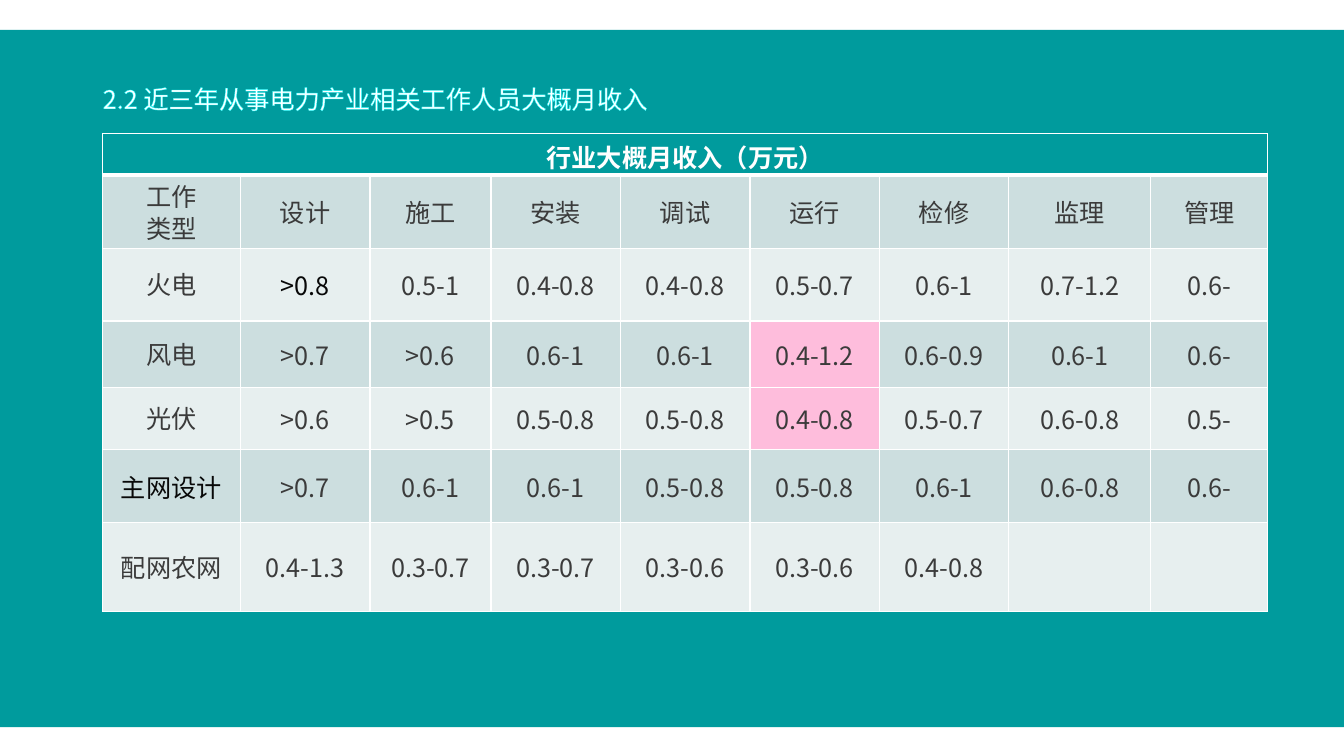
from lxml import etree
from pptx import Presentation
from pptx.dml.color import RGBColor
from pptx.enum import shapes, text
from pptx.oxml import ns
from pptx.util import Pt

FONT = "Noto Sans CJK SC"
TEAL, WHITE, PINK = "009B9D", "FFFFFF", "FEBDDC"
BANDS = ["E7EFEF", "CCDEDF"]
GREY, BLACK = "3B3B3B", "080808"


def paint(fill, color):
    fill.solid()
    fill.fore_color.rgb = RGBColor.from_string(color)


def write(para, words, color, bold=False):
    run = para.add_run()
    run.text = words
    run.font.size = Pt(18)
    run.font.bold = bold
    run.font.name = FONT
    paint(run.font.fill, color)
    props = run.font._element
    etree.SubElement(props, ns.qn("a:ea"), typeface=FONT)
    return props


deck = Presentation()
deck.slide_width, deck.slide_height = Pt(960), Pt(540)
slide = deck.slides.add_slide(deck.slide_layouts[5])

panel = slide.shapes.add_shape(
    shapes.MSO_SHAPE.RECTANGLE, Pt(0), Pt(21.3), Pt(960), Pt(498.2))
panel.shadow.inherit = False
paint(panel.fill, TEAL)
panel.line.fill.background()

title = slide.shapes.title
title.element.addprevious(panel.element)
title.left, title.top, title.width, title.height = Pt(30.2), Pt(51.8), Pt(575.3), Pt(30.2)
frame = title.text_frame
frame.word_wrap = True
frame.auto_size = text.MSO_AUTO_SIZE.SHAPE_TO_FIT_TEXT
frame.vertical_anchor = text.MSO_ANCHOR.TOP
para = frame.paragraphs[0]
para.alignment = text.PP_ALIGN.JUSTIFY
para.line_spacing = 1.2
para._p.get_or_add_pPr().set("indent", str(Pt(36)))
props = write(para, "2.2 近三年从事电力产业相关工作人员大概月收入", WHITE)
edge = etree.Element(ns.qn("a:ln"), w=str(Pt(0.75)))
solid = etree.SubElement(edge, ns.qn("a:solidFill"))
etree.SubElement(solid, ns.qn("a:srgbClr"), val="2BFCFF")
props.insert(0, edge)

rows = [
    ["行业大概月收入（万元）"] + [""] * 8,
    ["工作\n类型", "设计", "施工", "安装", "调试", "运行", "检修", "监理", "管理"],
    ["火电", ">0.8", "0.5-1", "0.4-0.8", "0.4-0.8", "0.5-0.7", "0.6-1", "0.7-1.2", "0.6-"],
    ["风电", ">0.7", ">0.6", "0.6-1", "0.6-1", "0.4-1.2", "0.6-0.9", "0.6-1", "0.6-"],
    ["光伏", ">0.6", ">0.5", "0.5-0.8", "0.5-0.8", "0.4-0.8", "0.5-0.7", "0.6-0.8", "0.5-"],
    ["主网设计", ">0.7", "0.6-1", "0.6-1", "0.5-0.8", "0.5-0.8", "0.6-1", "0.6-0.8", "0.6-"],
    ["配网农网", "0.4-1.3", "0.3-0.7", "0.3-0.7", "0.3-0.6", "0.3-0.6", "0.4-0.8", "", ""],
]
widths = [98.6, 92.6, 86.4, 92.5, 92.5, 92.5, 92.5, 101.4, 83.6]
heights = [29.5, 52.6, 51.8, 47.5, 44.6, 51.8, 63.4]
pinks = {(3, 5), (4, 5)}
darks = {(2, 1), (5, 0)}

table = slide.shapes.add_table(
    len(rows), len(widths), Pt(73.1), Pt(95.4), Pt(sum(widths)), Pt(sum(heights))).table
for col, width in zip(table.columns, widths):
    col.width = Pt(width)
for row, height in zip(table.rows, heights):
    row.height = Pt(height)
table.cell(0, 0).merge(table.cell(0, len(widths) - 1))

for r, row in enumerate(rows):
    for c, words in enumerate(row):
        cell = table.cell(r, c)
        cell.vertical_anchor = text.MSO_ANCHOR.MIDDLE
        paint(cell.fill, TEAL if r == 0 else PINK if (r, c) in pinks else BANDS[r % 2])
        color = WHITE if r == 0 else BLACK if (r, c) in darks else GREY
        for i, line in enumerate(words.split("\n")):
            para = cell.text_frame.add_paragraph() if i else cell.text_frame.paragraphs[0]
            para.alignment = text.PP_ALIGN.CENTER
            if c == 0 and 1 <= r <= 4:
                para.line_spacing = 0.9
            if line:
                write(para, line, color, r == 0)
            else:
                para.font.size = Pt(18)
        for i, side in enumerate("LRTB"):
            thick = (r, side) in {(0, "B"), (1, "T")}
            edge = etree.Element(ns.qn("a:ln" + side), w=str(Pt(3 if thick else 1)))
            solid = etree.SubElement(edge, ns.qn("a:solidFill"))
            etree.SubElement(solid, ns.qn("a:srgbClr"), val=WHITE)
            cell._tc.get_or_add_tcPr().insert(i, edge)

deck.save("out.pptx")
